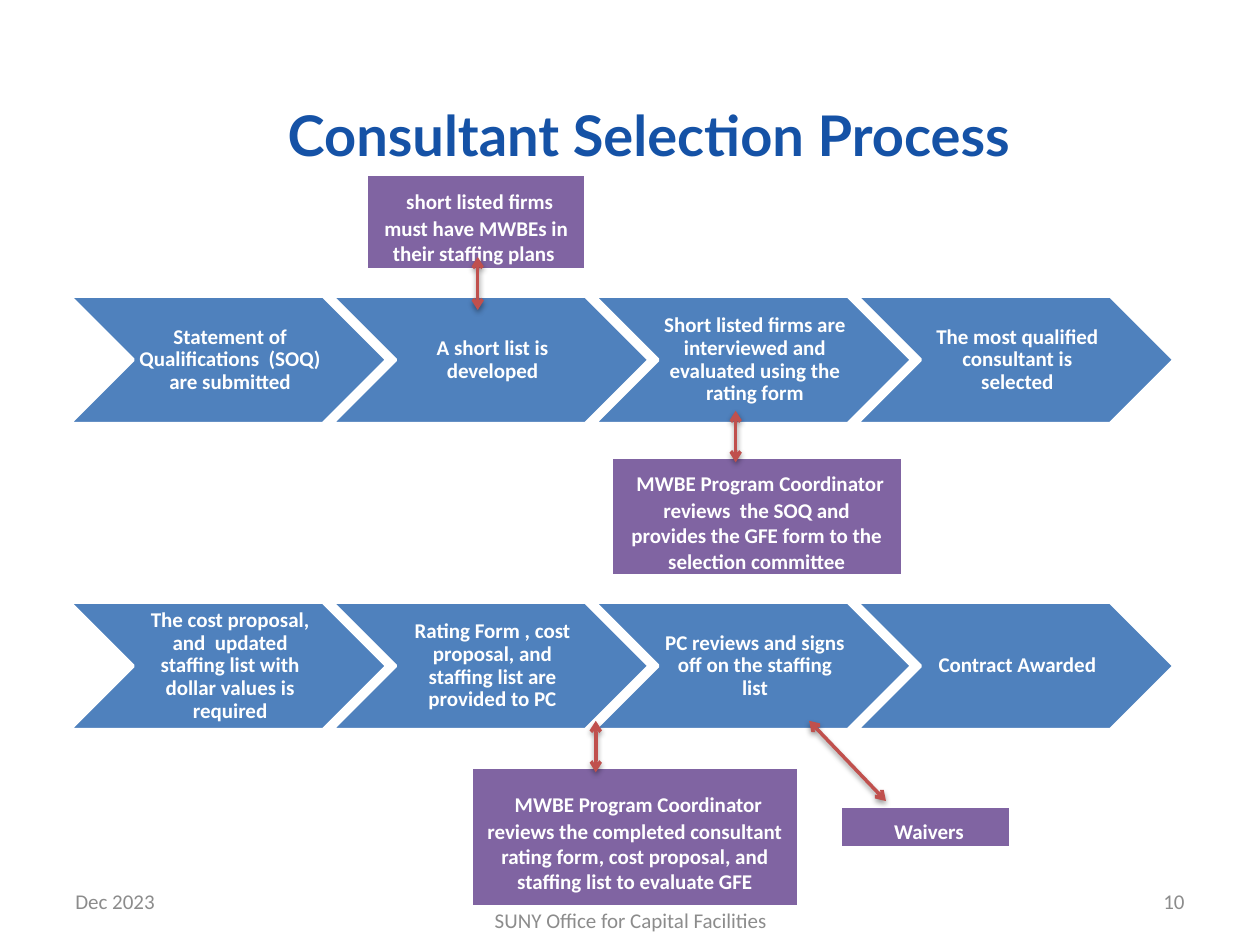
from dataclasses import dataclass

from lxml.etree import SubElement
from pptx import Presentation
from pptx.dml.color import RGBColor
from pptx.enum.shapes import MSO_CONNECTOR, MSO_SHAPE
from pptx.enum.text import MSO_ANCHOR, MSO_AUTO_SIZE, PP_ALIGN
from pptx.oxml import parse_xml
from pptx.oxml.ns import nsdecls, qn
from pptx.util import Cm, Pt

SHADOW = (
    f'<a:effectLst {nsdecls("a")}>'
    '<a:outerShdw blurRad="40000" dist="20000" dir="5400000" rotWithShape="0">'
    '<a:srgbClr val="000000"><a:alpha val="38000"/></a:srgbClr>'
    '</a:outerShdw></a:effectLst>'
)


@dataclass(frozen=True)
class Theme:
    blue: RGBColor = RGBColor.from_string("4F81BD")
    purple: RGBColor = RGBColor.from_string("8064A2")
    red: RGBColor = RGBColor.from_string("C0504D")
    navy: RGBColor = RGBColor.from_string("1552A6")
    grey: RGBColor = RGBColor.from_string("8C8C8C")
    white: RGBColor = RGBColor.from_string("FFFFFF")
    heading: str = "Lato"
    body: str = "Calibri"
    title: Pt = Pt(32)
    lead: Pt = Pt(18)
    text: Pt = Pt(12)
    line: Pt = Pt(2)


class Deck:
    """Holds the theme and the current slide and draws each kind of element."""

    def __init__(self, theme):
        self.theme = theme
        self.prs = Presentation()
        self.prs.slide_width, self.prs.slide_height = Cm(25.4), Cm(19.05)
        self.s = self.prs.slides.add_slide(self.prs.slide_layouts[5])

    def font(self, p, color, size=None, name=None, bold=True):
        p.font.name = name or self.theme.body
        p.font.size = size or self.theme.text
        p.font.bold = bold
        p.font.color.rgb = color

    def title(self, text, x, y, w, h):
        sp = self.s.shapes.title
        sp.left, sp.top, sp.width, sp.height = Cm(x), Cm(y), Cm(w), Cm(h)
        tf = sp.text_frame
        tf.text = text
        tf.auto_size = MSO_AUTO_SIZE.NONE
        p = tf.paragraphs[0]
        p.alignment = PP_ALIGN.CENTER
        self.font(p, self.theme.navy, self.theme.title, self.theme.heading)

    def shape(self, kind, fill, x, y, w, h):
        sp = self.s.shapes.add_shape(kind, Cm(x), Cm(y), Cm(w), Cm(h))
        sp.shadow.inherit = False
        sp.fill.solid()
        sp.fill.fore_color.rgb = fill
        sp.line.color.rgb = self.theme.white
        sp.line.width = self.theme.line
        return sp

    def label(self, text, x, y, w, h, align=PP_ALIGN.CENTER):
        tf = self.s.shapes.add_textbox(Cm(x), Cm(y), Cm(w), Cm(h)).text_frame
        tf.word_wrap = True
        tf.vertical_anchor = MSO_ANCHOR.MIDDLE
        p = tf.paragraphs[0]
        p.text = text
        p.alignment = align
        return tf

    def footer(self, text, x, y, w, align):
        tf = self.label(text, x, y, w, 1.02, align)
        self.font(tf.paragraphs[0], self.theme.grey, bold=False)

    def step(self, text, x, y, w=6.4, h=2.57, inset=1.28):
        self.shape(MSO_SHAPE.CHEVRON, self.theme.blue, x, y, w, h)
        tf = self.label(text, x + inset, y, w - 2 * inset, h)
        tf.margin_left = Cm(0.13)
        tf.margin_right = tf.margin_top = tf.margin_bottom = Cm(0.05)
        p = tf.paragraphs[0]
        p.line_spacing = 0.9
        self.font(p, self.theme.white)

    def steps(self, texts, y, x=1.4, pitch=5.29):
        for i, text in enumerate(texts):
            self.step(text, x + i * pitch, y)

    def note(self, text, x, y, w, h):
        sp = self.shape(MSO_SHAPE.FLOWCHART_PROCESS, self.theme.purple, x, y, w, h)
        tf = sp.text_frame
        tf.word_wrap = True
        tf.vertical_anchor = MSO_ANCHOR.MIDDLE
        p = tf.paragraphs[0]
        p.alignment = PP_ALIGN.CENTER
        self.font(p, self.theme.white)
        for part, size in ((" ", self.theme.lead), (text, self.theme.text)):
            r = p.add_run()
            r.text = part
            r.font.size = size

    def arrow(self, x1, y1, x2, y2):
        cx = self.s.shapes.add_connector(
            MSO_CONNECTOR.STRAIGHT, Cm(x1), Cm(y1), Cm(x2), Cm(y2))
        cx.line.color.rgb = self.theme.red
        cx.line.width = self.theme.line
        ln = cx.line._get_or_add_ln()
        for end in ("a:headEnd", "a:tailEnd"):
            SubElement(ln, qn(end), type="arrow")
        ln.getparent().append(parse_xml(SHADOW))


def main():
    deck = Deck(Theme())
    deck.title("Consultant Selection Process", 2.95, 1.88, 20.27, 1.63)
    deck.steps([
        "Statement of Qualifications  (SOQ) are submitted",
        "A short list is developed",
        "Short listed firms are interviewed and evaluated using the rating form",
        "The most qualified consultant is selected",
    ], 5.97)
    deck.steps([
        "The cost proposal, and  updated staffing list with dollar values is required",
        "Rating Form , cost proposal, and staffing list are provided to PC",
        "PC reviews and signs off on the staffing list",
        "Contract Awarded",
    ], 12.14)

    deck.note("MWBE Program Coordinator reviews  the SOQ and provides the GFE form "
              "to the selection committee", 12.32, 9.22, 5.87, 2.39)
    deck.note("MWBE Program Coordinator reviews the completed consultant rating form, "
              "cost proposal, and staffing list to evaluate GFE", 9.5, 15.47, 6.6, 2.82)
    deck.note("short listed firms must have MWBEs in their staffing plans ",
              7.39, 3.51, 4.42, 1.93)
    deck.note("Waivers", 16.94, 16.26, 3.43, 0.84)

    for ends in ((14.83, 8.28, 14.83, 9.32), (12.01, 14.53, 12.01, 15.57),
                 (9.63, 5.18, 9.63, 6.25), (16.31, 14.53, 17.86, 16.15)):
        deck.arrow(*ends)

    deck.footer("10", 18.21, 17.65, 5.92, PP_ALIGN.RIGHT)
    deck.footer("SUNY Office for Capital Facilities", 8.69, 18.03, 8.05, PP_ALIGN.CENTER)
    deck.footer("Dec 2023", 1.27, 17.65, 5.92, PP_ALIGN.LEFT)
    deck.prs.save("out.pptx")


if __name__ == "__main__":
    main()
